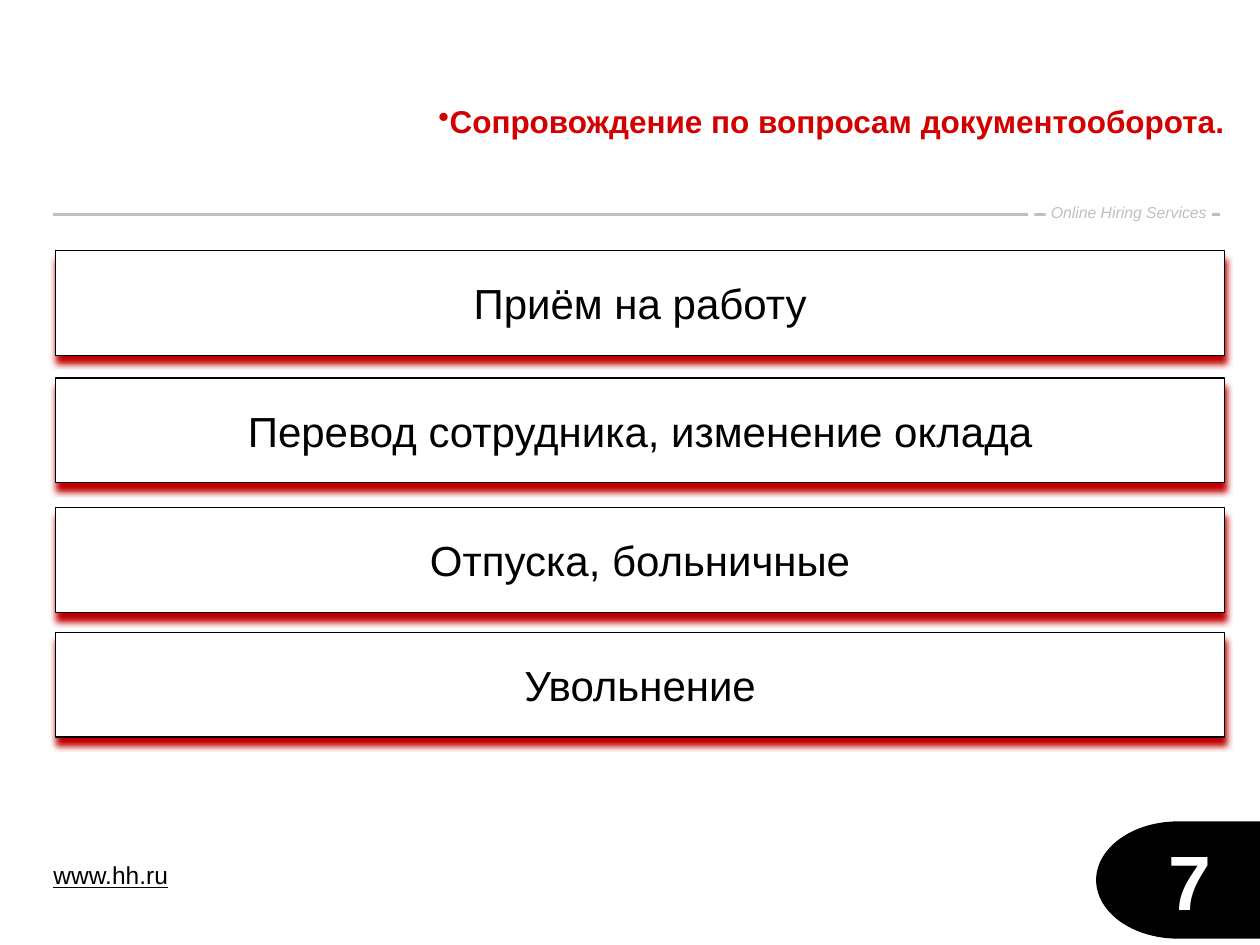
from lxml import etree
from pptx import Presentation
from pptx.dml.color import RGBColor
from pptx.enum.shapes import MSO_CONNECTOR, MSO_SHAPE
from pptx.enum.text import MSO_ANCHOR, PP_ALIGN
from pptx.oxml.ns import qn
from pptx.util import Pt

BLACK, WHITE, GREY, RED, DARK_RED = "000000", "FFFFFF", "BFBFBF", "D20000", "C00000"
ROWS = [
    (143.3, "Приём на работу"),
    (216, "Перевод сотрудника, изменение оклада"),
    (290.2, "Отпуска, больничные"),
    (361.4, "Увольнение"),
]


def rgb(value):
    return RGBColor.from_string(value)


def write(sp, text, color, align=PP_ALIGN.CENTER, anchor=MSO_ANCHOR.MIDDLE,
          margins=(7.2, 3.6), wrap=False, bullet=None, **font):
    tf = sp.text_frame
    tf.word_wrap = wrap
    tf.vertical_anchor = anchor
    tf.margin_left = tf.margin_right = Pt(margins[0])
    tf.margin_top = tf.margin_bottom = Pt(margins[1])
    p = tf.paragraphs[0]
    p.alignment = align
    if bullet:
        pPr = p._p.get_or_add_pPr()
        pPr.set("marL", "0")
        pPr.set("indent", "0")
        etree.SubElement(pPr, qn("a:buChar")).set("char", bullet)
    r = p.add_run()
    r.text = text
    r.font.color.rgb = rgb(color)
    for name, value in {"name": "Arial", **font}.items():
        setattr(r.font, name, value)


def add_box(s, kind, box, fill, line=None):
    sp = s.shapes.add_shape(kind, *map(Pt, box))
    sp.shadow.inherit = False
    sp.fill.solid()
    sp.fill.fore_color.rgb = rgb(fill)
    if line:
        sp.line.color.rgb = rgb(line)
        sp.line.width = Pt(0.75)
    else:
        sp.line.fill.background()
    return sp


def add_shadow(sp, color):
    """Cast a soft shadow straight down."""
    effects = sp._element.spPr.find(qn("a:effectLst"))
    shadow = etree.SubElement(effects, qn("a:outerShdw"), blurRad=str(Pt(4)),
                              dist=str(Pt(4)), dir="5400000", algn="t", rotWithShape="0")
    etree.SubElement(shadow, qn("a:srgbClr"), val=color)


def add_title(s, left, top, width, height):
    sp = s.shapes.title
    sp.left, sp.top, sp.width, sp.height = map(Pt, (left, top, width, height))
    write(sp, "Сопровождение по вопросам документооборота.", RED, PP_ALIGN.RIGHT,
          MSO_ANCHOR.TOP, (0, 0), wrap=True, bullet="•", size=Pt(18), bold=True)


def add_divider(s, left, y, width):
    right = left + width
    line = s.shapes.add_connector(MSO_CONNECTOR.STRAIGHT, Pt(left), Pt(y), Pt(right), Pt(y))
    line.line.color.rgb = rgb(GREY)
    line.line.width = Pt(1.5)
    etree.SubElement(line._element.spPr, qn("a:effectLst"))
    label = add_box(s, MSO_SHAPE.RECTANGLE, (right - 99.4, y - 6.5, 95, 10.8), WHITE)
    write(label, "Online Hiring Services", GREY, margins=(2.9, 0), size=Pt(9), italic=True)
    add_box(s, MSO_SHAPE.RECTANGLE, (right - 109.4, y - 3.6, 3.6, 6.5), WHITE)


def add_rows(s, left, width, height):
    for top, text in ROWS:
        sp = add_box(s, MSO_SHAPE.RECTANGLE, (left, top, width, height), WHITE, BLACK)
        add_shadow(sp, DARK_RED)
        write(sp, text, BLACK, size=Pt(24))


def add_footer(s, left, top, width, height):
    """Put the web address on the left and the page number tab on the right."""
    address = s.shapes.add_textbox(Pt(left), Pt(top + 18.7), Pt(80.6), Pt(24.5))
    write(address, "www.hh.ru", BLACK, anchor=MSO_ANCHOR.TOP, size=Pt(14), underline=True)
    tab_width = 93.6
    tab = add_box(s, MSO_SHAPE.FLOWCHART_DELAY,
                  (left + width - tab_width, top, tab_width, height), BLACK)
    tab._element.spPr.find(qn("a:xfrm")).set("flipH", "1")
    write(tab, "7", WHITE, size=Pt(44), bold=True)


def main():
    prs = Presentation()
    prs.slide_width, prs.slide_height = Pt(720), Pt(540)
    s = prs.slides.add_slide(prs.slide_layouts[5])
    add_divider(s, 30.2, 122.4, 666.7)
    add_footer(s, 23, 469.4, 697, 67)
    add_title(s, 221.8, 58.3, 478, 40.3)
    add_rows(s, 31.7, 668.2, 59.8)
    prs.save("out.pptx")


if __name__ == "__main__":
    main()
